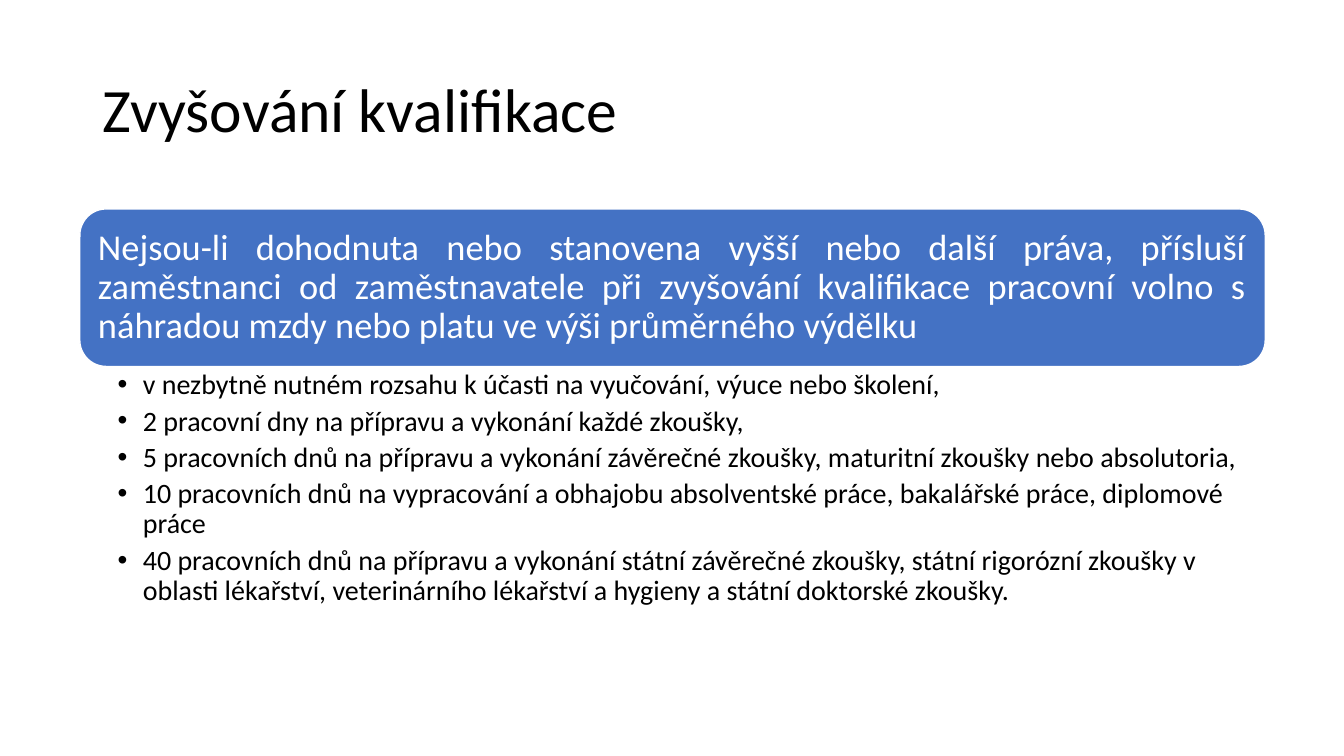
from lxml import etree
from pptx import Presentation
from pptx.dml.color import RGBColor
from pptx.enum.shapes import MSO_SHAPE
from pptx.enum.text import MSO_ANCHOR, PP_ALIGN
from pptx.oxml.ns import qn
from pptx.util import Pt

ROUND = MSO_SHAPE.ROUNDED_RECTANGLE
MIDDLE, TOP = MSO_ANCHOR.MIDDLE, MSO_ANCHOR.TOP
LEFT, JUSTIFY = PP_ALIGN.LEFT, PP_ALIGN.JUSTIFY
PX = 9525
FONT = "Calibri"
COLORS = {"text": "000000", "banner": "4472C4", "white": "FFFFFF"}

TITLE = "Zvyšování kvalifikace"
RULE = (
    "Nejsou-li dohodnuta nebo stanovena vyšší nebo další práva, přísluší "
    "zaměstnanci od zaměstnavatele při zvyšování kvalifikace pracovní volno "
    "s náhradou mzdy nebo platu ve výši průměrného výdělku"
)
LEAVE = [
    "v nezbytně nutném rozsahu k účasti na vyučování, výuce nebo školení,",
    "2 pracovní dny na přípravu a vykonání každé zkoušky,",
    "5 pracovních dnů na přípravu a vykonání závěrečné zkoušky, "
    "maturitní zkoušky nebo absolutoria,",
    "10 pracovních dnů na vypracování a obhajobu absolventské práce, "
    "bakalářské práce, diplomové práce",
    "40 pracovních dnů na přípravu a vykonání státní závěrečné zkoušky, "
    "státní rigorózní zkoušky v oblasti lékařství, veterinárního lékařství "
    "a hygieny a státní doktorské zkoušky.",
]


def color(name):
    return RGBColor.from_string(COLORS[name])


def scale(box):
    return [n * PX for n in box]


def write(shape, lines, size, tone, insets, anchor=TOP, align=LEFT, after=0):
    frame = shape.text_frame
    frame.word_wrap = True
    frame.vertical_anchor = anchor
    (frame.margin_left, frame.margin_top,
     frame.margin_right, frame.margin_bottom) = scale(insets)
    frame.text = "\n".join(lines)
    for para in frame.paragraphs:
        para.alignment = align
        para.line_spacing = 0.9
        para.space_after = Pt(after)
        for run in para.runs:
            run.font.name = FONT
            run.font.size = Pt(size)
            run.font.color.rgb = color(tone)


def bullet(para, indent):
    props = para._p.get_or_add_pPr()
    props.set("marL", str(indent * PX))
    props.set("indent", str(-indent * PX))
    etree.SubElement(props, qn("a:buFont")).set("typeface", "Arial")
    etree.SubElement(props, qn("a:buChar")).set("char", "•")


# Heading
def add_title(slide, box):
    shape = slide.shapes.add_textbox(*scale(box))
    write(shape, [TITLE], 44, "text", (10, 5, 10, 5), MIDDLE)


# Blue banner with the general rule
def add_banner(slide, box):
    shape = slide.shapes.add_shape(ROUND, *scale(box))
    shape.shadow.inherit = False
    shape.fill.solid()
    shape.fill.fore_color.rgb = color("banner")
    shape.line.color.rgb = color("white")
    shape.line.width = Pt(1)
    write(shape, [RULE], 26, "white", (10, 10, 10, 10), MIDDLE, JUSTIFY)


# Bulleted leave entitlements
def add_list(slide, box):
    shape = slide.shapes.add_textbox(*scale(box))
    write(shape, LEAVE, 20, "text", (36, 4, 19, 4), after=4.3)
    for para in shape.text_frame.paragraphs:
        bullet(para, 24)


def main():
    deck = Presentation()
    deck.slide_width, deck.slide_height = scale((1280, 720))
    slide = deck.slides.add_slide(deck.slide_layouts[6])
    left, top, width, height = 76, 199, 1129, 150
    add_title(slide, (88, 38, 1104, 139))
    add_banner(slide, (left, top, width, height))
    add_list(slide, (left, top + height, width, 243))
    deck.save("out.pptx")


if __name__ == "__main__":
    main()
